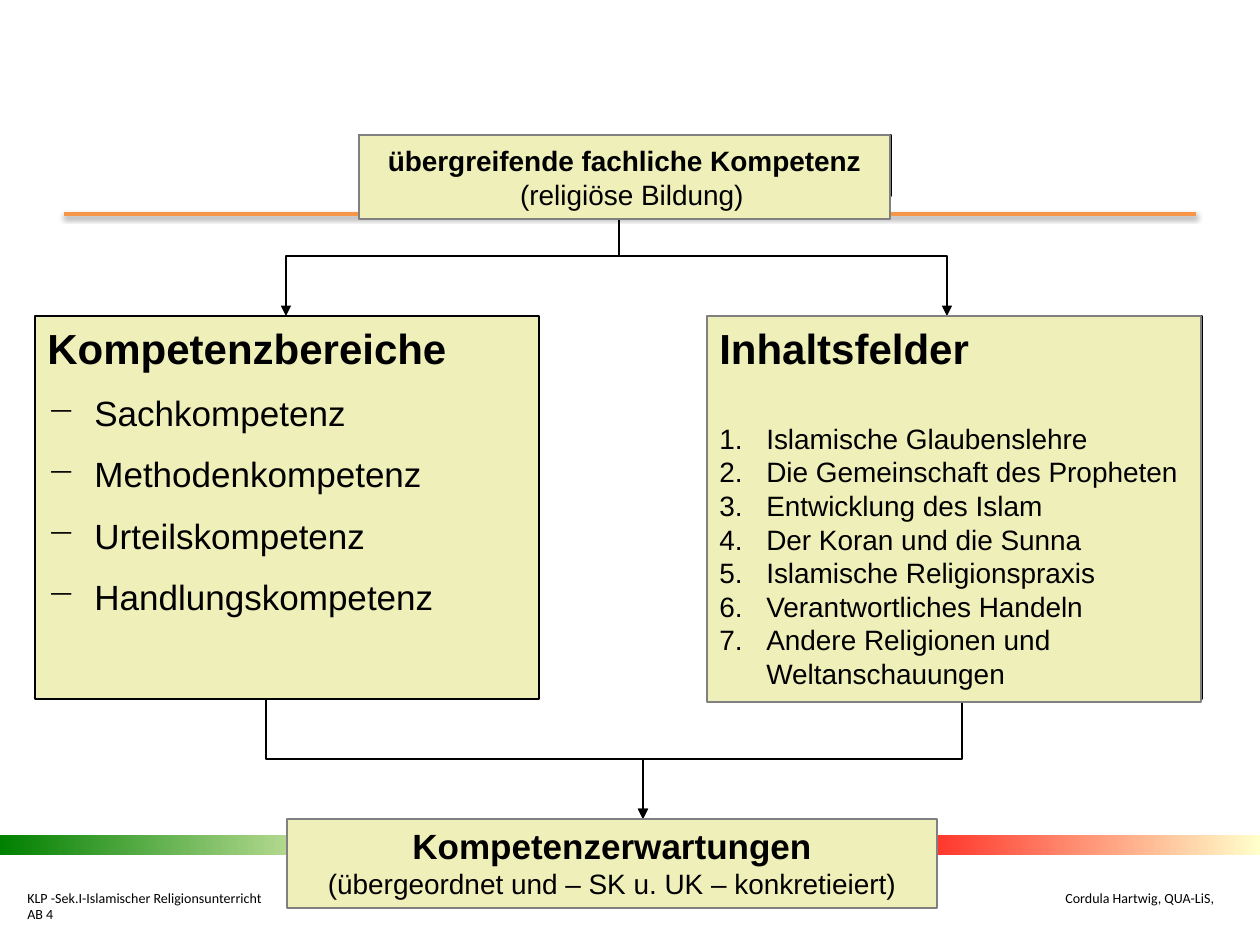
from lxml import etree
from pptx import Presentation, util as u
from pptx.dml.color import RGBColor
from pptx.enum import shapes, text
from pptx.oxml.ns import qn

PX = u.Inches(1) / 126
COLORS = {"black": "000000", "box": "EFEFB9", "border": "808080", "rule": "F79646",
          "green": "008000", "red": "FF0000", "cream": "FFFFCC"}
RGB = {name: RGBColor.from_string(value) for name, value in COLORS.items()}

presentation = Presentation()
presentation.slide_width, presentation.slide_height = u.Inches(10), u.Inches(7.5)
slide = presentation.slides.add_slide(presentation.slide_layouts[6])


def add_line(kind, points, color="black", width=0.75, arrow=False):
    """Draw a connector and return its empty effect list."""
    line = slide.shapes.add_connector(kind, *(round(value * PX) for value in points))
    line.line.color.rgb, line.line.width = RGB[color], u.Pt(width)
    properties = line._element.spPr
    if arrow:
        etree.SubElement(properties.find(qn("a:ln")), qn("a:tailEnd"), type="triangle")
    return etree.SubElement(properties, qn("a:effectLst"))


def add_box(bounds, fill=None, border=None, paragraphs=(), margin_top=6):
    """Draw a rectangle; each paragraph is (text, bullet, font values, paragraph values)."""
    box = slide.shapes.add_shape(shapes.MSO_SHAPE.RECTANGLE, *(round(value * PX) for value in bounds))
    box.shadow.inherit = False
    if fill:
        box.fill.solid()
        box.fill.fore_color.rgb = RGB[fill]
    else:
        box.fill.background()
    if border:
        box.line.color.rgb, box.line.width = RGB[border], u.Pt(0.75)
    else:
        box.line.fill.background()
    frame = box.text_frame
    frame.word_wrap = True
    frame.vertical_anchor = text.MSO_ANCHOR.TOP
    frame.margin_top = round(margin_top * PX)
    for index, (words, bullet, font, layout) in enumerate(paragraphs):
        paragraph = frame.add_paragraph() if index else frame.paragraphs[0]
        paragraph.text = words
        properties = paragraph._p.get_or_add_pPr()
        if bullet:
            indent = round(47 * PX)
            properties.set("marL", str(indent))
            properties.set("indent", str(-indent))
            tag, values = bullet
            etree.SubElement(properties, qn(tag), values)
        for name, value in ({"alignment": text.PP_ALIGN.LEFT} | layout).items():
            setattr(paragraph, name, value)
        for name, value in ({"name": "Arial", "bold": False} | font).items():
            setattr(paragraph.font, name, value)
        paragraph.font.color.rgb = RGB["black"]
    return box


HEADING = {"size": u.Pt(24), "bold": True}
LARGE = {"size": u.Pt(20)}
NORMAL = {"size": u.Pt(16)}
BOLD = {"bold": True}
CENTER = {"alignment": text.PP_ALIGN.CENTER}
DASH = ("a:buChar", {"char": "−"})
NUMBER = ("a:buAutoNum", {"type": "arabicPeriod"})

# Background: orange rule with shadow, two gradient bars
effects = add_line(shapes.MSO_CONNECTOR.STRAIGHT, (64, 214, 1196, 214), "rule", 2)
shadow = etree.SubElement(effects, qn("a:outerShdw"), blurRad=str(u.Pt(3.1)),
                          dist=str(u.Pt(1.6)), dir="5400000", rotWithShape="0")
shadow_color = etree.SubElement(shadow, qn("a:srgbClr"), val=COLORS["black"])
etree.SubElement(shadow_color, qn("a:alpha"), val="38000")

for left, colors in ((0, ("green", "cream")), (848, ("red", "cream"))):
    bar = add_box((left, 835, 412, 20))
    bar.fill.gradient()
    bar.fill.gradient_angle = 0
    for stop, color in zip(bar.fill.gradient_stops, colors):
        stop.color.rgb = RGB[color]

# Areas of competence
areas = ["Sachkompetenz", "Methodenkompetenz", "Urteilskompetenz", "Handlungskompetenz"]
add_box((35, 316, 504, 383), "box", "black",
        [("Kompetenzbereiche", None, HEADING, {})]
        + [(area, DASH, LARGE, {"space_before": u.Pt(11)}) for area in areas])

# Elbow arrows leave and arrive vertically, so each one is a quarter turn
for x1, y1, x2, y2 in ((619, 196, 286, 316), (619, 196, 947, 316),
                       (266, 699, 643, 819), (962, 699, 643, 819)):
    center_x, center_y = (x1 + x2) / 2, (y1 + y2) / 2
    side = 1 if x2 > x1 else -1
    half_width, half_height = side * (y2 - y1) / 2, abs(x2 - x1) / 2
    add_line(shapes.MSO_CONNECTOR.ELBOW,
             (center_x + half_width, center_y - half_height,
              center_x - half_width, center_y + half_height), arrow=True)
    elbow = slide.shapes[-1]
    elbow._element.spPr.find(qn("a:xfrm")).set("rot", "16200000" if side > 0 else "5400000")

# Black outlines behind the filled boxes
for bounds in ((359, 135, 532, 61), (708, 316, 494, 383), (287, 820, 650, 64)):
    add_box(bounds, border="black")

add_box((359, 135, 531, 84), "box", "border",
        [("übergreifende fachliche Kompetenz", None, NORMAL | BOLD, CENTER),
         ("(religiöse Bildung)", None, NORMAL, CENTER)], margin_top=9)
slide.shapes[-1].text_frame.paragraphs[1]._p.pPr.set("marL", str(round(15 * PX)))

fields = ["Islamische Glaubenslehre", "Die Gemeinschaft des Propheten", "Entwicklung des Islam",
          "Der Koran und die Sunna", "Islamische Religionspraxis", "Verantwortliches Handeln",
          "Andere Religionen und Weltanschauungen"]
add_box((707, 316, 494, 386), "box", "border",
        [("Inhaltsfelder", None, HEADING, {"space_after": u.Pt(28)})]
        + [(field, NUMBER, NORMAL, {}) for field in fields])

add_box((287, 819, 650, 89), "box", "border",
        [("Kompetenzerwartungen", None, LARGE | BOLD, CENTER),
         ("(übergeordnet und – SK u. UK – konkretieiert)", None, NORMAL, CENTER)])

# Footer with a tab stop for the author
footer = slide.shapes.add_textbox(*(round(value * PX) for value in (15, 881, 1221, 50)))
frame = footer.text_frame
frame.word_wrap = True
frame.vertical_anchor = text.MSO_ANCHOR.MIDDLE
paragraph = frame.paragraphs[0]
paragraph.text = "KLP -Sek.I-Islamischer Religionsunterricht\tCordula Hartwig, QUA-LiS, AB 4"
tabs = etree.SubElement(paragraph._p.get_or_add_pPr(), qn("a:tabLst"))
etree.SubElement(tabs, qn("a:tab"), pos=str(round(1038 * PX)), algn="l")
for name, value in {"name": "Calibri", "size": u.Pt(8)}.items():
    setattr(paragraph.font, name, value)
paragraph.font.color.rgb = RGB["black"]

presentation.save("out.pptx")
